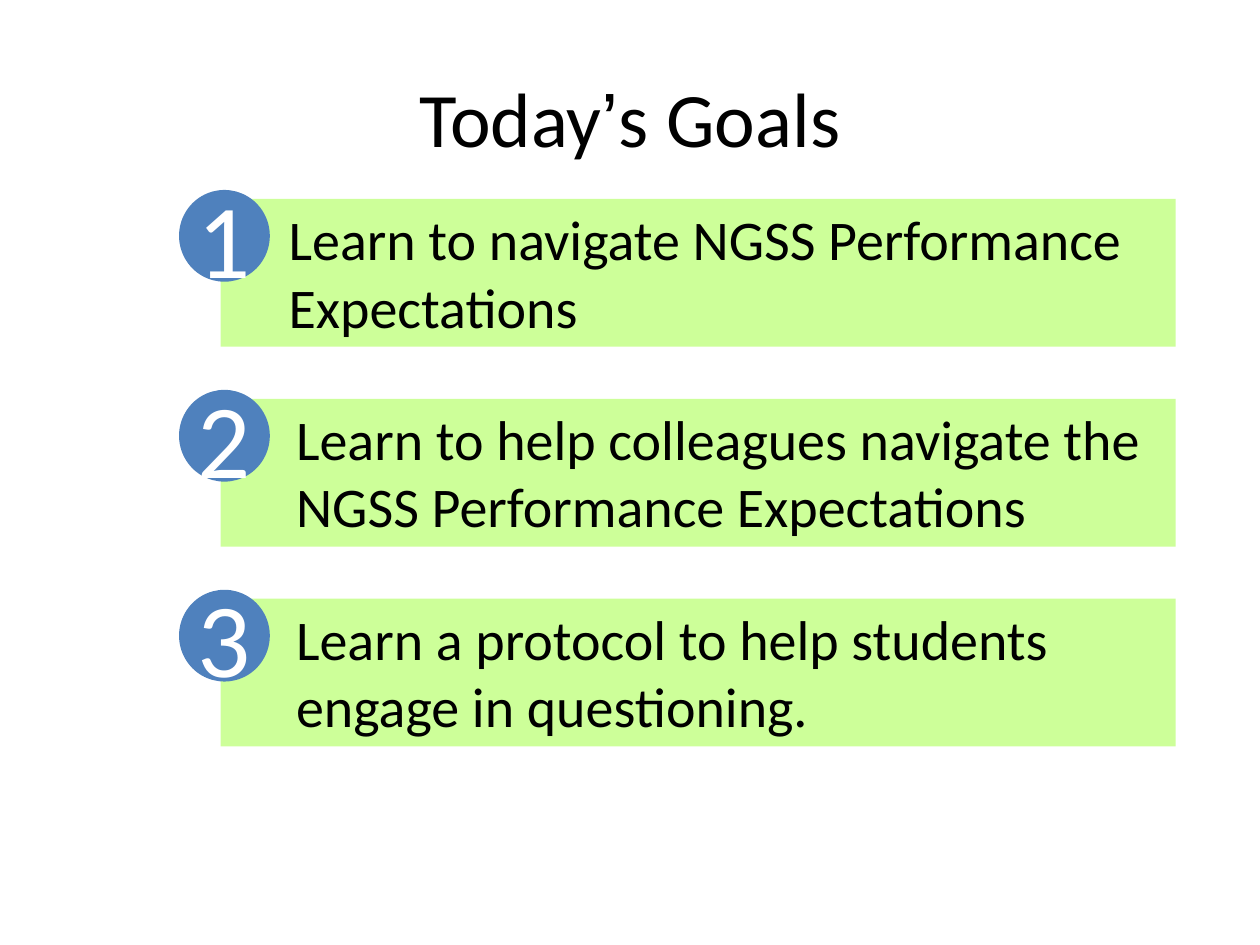
from pptx import Presentation
from pptx import util as u
from pptx.dml.color import RGBColor
from pptx.enum import shapes, text

BLACK = RGBColor(0x00, 0x00, 0x00)
WHITE = RGBColor(0xFF, 0xFF, 0xFF)
LIME = RGBColor(0xCD, 0xFF, 0x99)
BLUE = RGBColor(0x4F, 0x81, 0xBD)

TITLE_ONLY = 5
FIRST_TOP = 4.01
PITCH = 4.03
INSET = 0.1

GOALS = [
    ("Learn to navigate NGSS Performance Expectations", 1.37),
    ("Learn to help colleagues navigate the NGSS Performance Expectations", 1.52),
    ("Learn a protocol to help students engage in questioning.", 1.52),
]


def format_frame(frame, anchor, left=INSET, top=INSET, right=INSET, bottom=INSET):
    settings = {
        "word_wrap": True,
        "auto_size": text.MSO_AUTO_SIZE.NONE,
        "vertical_anchor": anchor,
        "margin_left": u.Cm(left),
        "margin_top": u.Cm(top),
        "margin_right": u.Cm(right),
        "margin_bottom": u.Cm(bottom),
    }
    for name, value in settings.items():
        setattr(frame, name, value)


def add_span(para, words, size, color, font="Calibri"):
    span = para.add_run()
    span.text = words
    for name, value in {"name": font, "size": u.Pt(size)}.items():
        setattr(span.font, name, value)
    span.font.color.rgb = color


def add_plain_shape(parent, kind, color, left, top, width, height):
    shape = parent.add_shape(kind, u.Cm(left), u.Cm(top), u.Cm(width), u.Cm(height))
    shape.shadow.inherit = False
    shape.fill.solid()
    shape.fill.fore_color.rgb = color
    shape.line.fill.background()
    return shape


def add_title(page):
    title = page.shapes.title
    place = {"left": 1.27, "top": 0.76, "width": 22.86, "height": 3.18}
    for name, value in place.items():
        setattr(title, name, u.Cm(value))
    format_frame(title.text_frame, text.MSO_ANCHOR.MIDDLE)
    para = title.text_frame.paragraphs[0]
    para.alignment = text.PP_ALIGN.CENTER
    for words, font in (("Today", "Calibri"), ("’", "Arial"), ("s Goals", "Calibri")):
        add_span(para, words, 44, BLACK, font)


def add_goal(page, top, words, indent):
    box = add_plain_shape(page.shapes, shapes.MSO_SHAPE.RECTANGLE, LIME,
                          4.45, top, 19.25, 2.98)
    edge = indent - 1.27
    format_frame(box.text_frame, text.MSO_ANCHOR.TOP, indent, 0.12, edge, 0.12)
    para = box.text_frame.paragraphs[0]
    para.alignment = text.PP_ALIGN.LEFT
    add_span(para, words, 32, BLACK)


def add_badge(page, top, number):
    badge = page.shapes.add_group_shape().shapes
    add_plain_shape(badge, shapes.MSO_SHAPE.OVAL, BLUE, 3.61, top - 0.18, 1.83, 1.85)
    box = badge.add_textbox(u.Cm(3.86), u.Cm(top - 0.84), u.Cm(1.3), u.Cm(3.18))
    format_frame(box.text_frame, text.MSO_ANCHOR.MIDDLE)
    para = box.text_frame.paragraphs[0]
    para.alignment = text.PP_ALIGN.CENTER
    add_span(para, str(number), 60, WHITE)


def main():
    deck = Presentation()
    deck.slide_width = u.Cm(25.4)
    deck.slide_height = u.Cm(19.05)
    page = deck.slides.add_slide(deck.slide_layouts[TITLE_ONLY])
    add_title(page)
    for index, (words, indent) in enumerate(GOALS):
        top = FIRST_TOP + index * PITCH
        add_goal(page, top, words, indent)
        add_badge(page, top, index + 1)
    deck.save("out.pptx")


if __name__ == "__main__":
    main()
